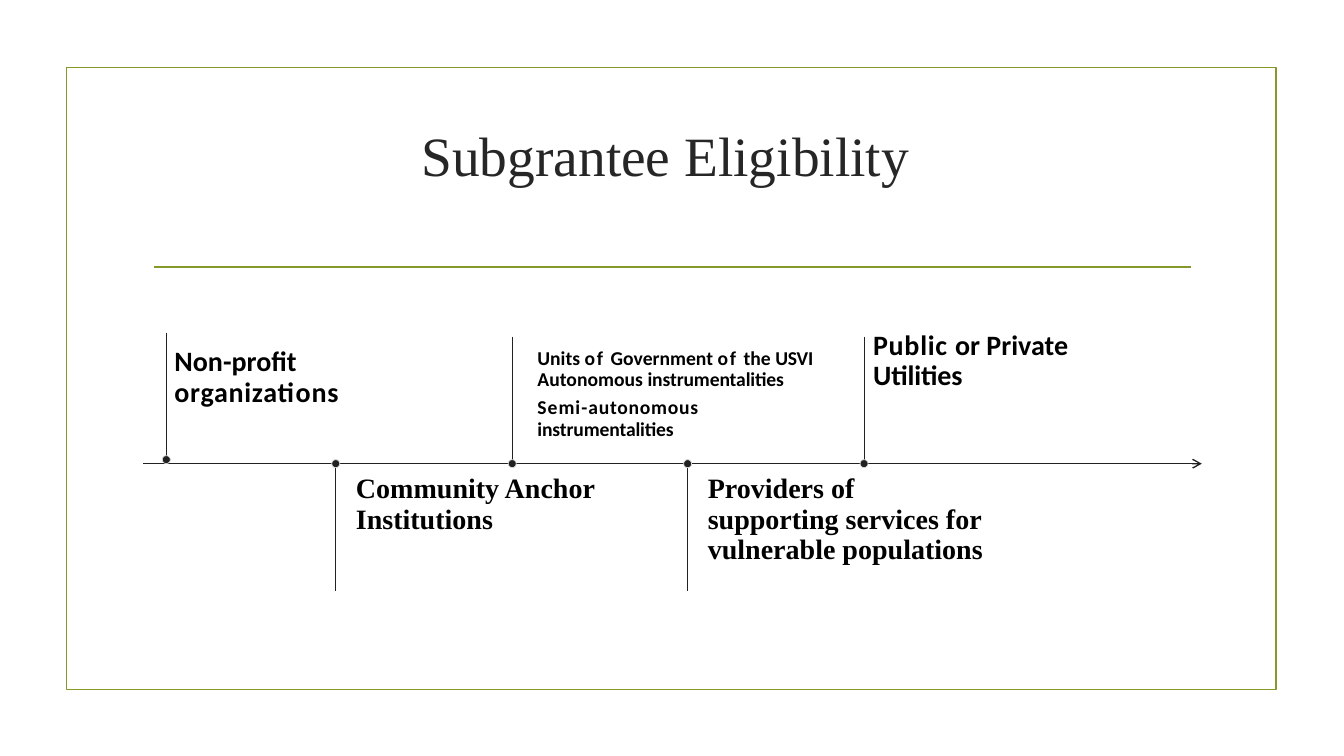
from lxml import etree
from pptx import Presentation
from pptx.dml.color import RGBColor
from pptx.enum.shapes import MSO_CONNECTOR as CONN, MSO_SHAPE as SHAPE
from pptx.enum.text import MSO_ANCHOR as ANCHOR, PP_ALIGN as ALIGN
from pptx.oxml.ns import qn
from pptx.util import Inches, Pt

OLIVE = RGBColor(0x83, 0x99, 0x2A)
CHARCOAL = RGBColor(0x21, 0x21, 0x21)
TITLE_GRAY = RGBColor(0x26, 0x26, 0x26)
PALE = RGBColor(0xDA, 0xDA, 0xDA)
BLACK = RGBColor(0, 0, 0)
SERIF, SANS = "Times New Roman", "Calibri"
STEM, DOT = 1.26, 0.08

MILESTONES = [
    dict(x=1.65, axis_dy=-0.04, up=True, gap=0.08, text_dy=-1.34, height=0.98,
         font=SANS, size=20, paras=[[("Non-profit ", 0), ("organizations", 0.5)]]),
    dict(x=3.33, axis_dy=0, up=False, gap=0.2, text_dy=0.11, height=0.68,
         font=SERIF, size=20, paras=[[("Community Anchor Institutions", 0)]]),
    dict(x=5.08, axis_dy=0, up=True, gap=0.25, text_dy=-0.85, height=0.33,
         font=SANS, size=14, paras=[
             [("Units ", 0), ("of ", 1.1), ("Government ", 0), ("of ", 1.1),
              ("the ", 0), ("USVI ", -0.2), ("Autonomous ", 0),
              ("instrumentalities", -0.1)],
             [("Semi-", 0.7), ("autonomous ", 0.5), ("instrumentalities", -0.1)]]),
    dict(x=6.82, axis_dy=0, up=False, gap=0.2, text_dy=0.11, height=0.98,
         font=SERIF, size=20, paras=[
             [("Providers of\vsupporting services for vulnerable populations", 0)]]),
    dict(x=8.57, axis_dy=0, up=True, gap=0.09, text_dy=-1.18, height=0.33,
         font=SANS, size=20,
         paras=[[("Public ", 0.5), ("or Private ", 0), ("Utilities", -0.1)]]),
]


def add_text(s, box, paras, *, font, size, color=BLACK, bold=False, align=ALIGN.LEFT,
             anchor=ANCHOR.TOP, right=0.0, line_spacing=1.0, after=0.0):
    tf = s.shapes.add_textbox(*map(Inches, box)).text_frame
    tf.word_wrap = True
    tf.vertical_anchor = anchor
    tf.margin_left = tf.margin_top = tf.margin_bottom = 0
    tf.margin_right = Inches(right)
    for i, runs in enumerate(paras):
        p = tf.add_paragraph() if i else tf.paragraphs[0]
        p.alignment, p.line_spacing, p.space_after = align, line_spacing, Pt(after)
        for n, piece in enumerate(runs[0][0].split("\v") if len(runs) == 1 else []):
            if n:
                p.add_line_break()
            add_run(p, piece, runs[0][1], font, size, color, bold)
        if len(runs) > 1:
            for words, tracking in runs:
                add_run(p, words, tracking, font, size, color, bold)


def add_run(p, words, tracking, font, size, color, bold):
    r = p.add_run()
    r.text = words
    r.font.name, r.font.size, r.font.bold = font, Pt(size), bold
    r.font.color.rgb = color
    if tracking:
        r.font._element.set("spc", str(round(tracking * 100)))


def add_line(s, x1, y1, x2, y2, color, width, arrow=False):
    line = s.shapes.add_connector(CONN.STRAIGHT, *map(Inches, (x1, y1, x2, y2)))
    line.line.color.rgb = color
    line.line.width = Pt(width)
    if arrow:
        etree.SubElement(line.line._get_or_add_ln(), qn("a:tailEnd"), type="arrow")
    etree.SubElement(line._element.spPr, qn("a:effectLst"))


def add_shape(s, kind, box, line, width, fill=None):
    sp = s.shapes.add_shape(kind, *map(Inches, box))
    sp.shadow.inherit = False
    if fill is None:
        sp.fill.background()
    else:
        sp.fill.solid()
        sp.fill.fore_color.rgb = fill
    sp.line.color.rgb = line
    sp.line.width = Pt(width)


def add_frame(s, x, y, w, h):
    add_shape(s, SHAPE.RECTANGLE, (x, y, w, h), OLIVE, 1.25)
    add_line(s, x + 0.87, y + 1.98, x + w - 0.85, y + 1.98, OLIVE, 1.25)


def add_title(s, x, y, w, h):
    add_text(s, (x, y, w, h), [[("Subgrantee Eligibility", 0)]], font=SERIF,
             size=39.6, color=TITLE_GRAY, align=ALIGN.CENTER)


def add_milestone(s, axis_y, x, axis_dy, up, gap, text_dy, height, font, size, paras):
    y = axis_y + axis_dy
    add_text(s, (x + gap, axis_y + text_dy, 2.91, height), paras, font=font, size=size,
             bold=True, anchor=ANCHOR.MIDDLE if up else ANCHOR.TOP,
             right=0.1 if size < 20 else 0.14, line_spacing=0.9, after=size * 0.35)
    add_line(s, x, y - STEM if up else y, x, y if up else y + STEM, CHARCOAL, 0.75)
    add_shape(s, SHAPE.OVAL, (x - DOT / 2, y - DOT / 2, DOT, DOT), PALE, 0.5, CHARCOAL)


def add_timeline(s, x, y, w):
    add_line(s, x, y, x + w, y, CHARCOAL, 0.95, arrow=True)
    for milestone in MILESTONES:
        add_milestone(s, y, **milestone)


def main():
    prs = Presentation()
    prs.slide_width, prs.slide_height = Inches(13.33), Inches(7.5)
    s = prs.slides.add_slide(prs.slide_layouts[6])
    add_frame(s, 0.66, 0.67, 12, 6.17)
    add_title(s, 1.35, 1.2, 10.5, 0.7)
    add_timeline(s, 1.42, 4.6, 10.5)
    prs.save("out.pptx")


if __name__ == "__main__":
    main()
